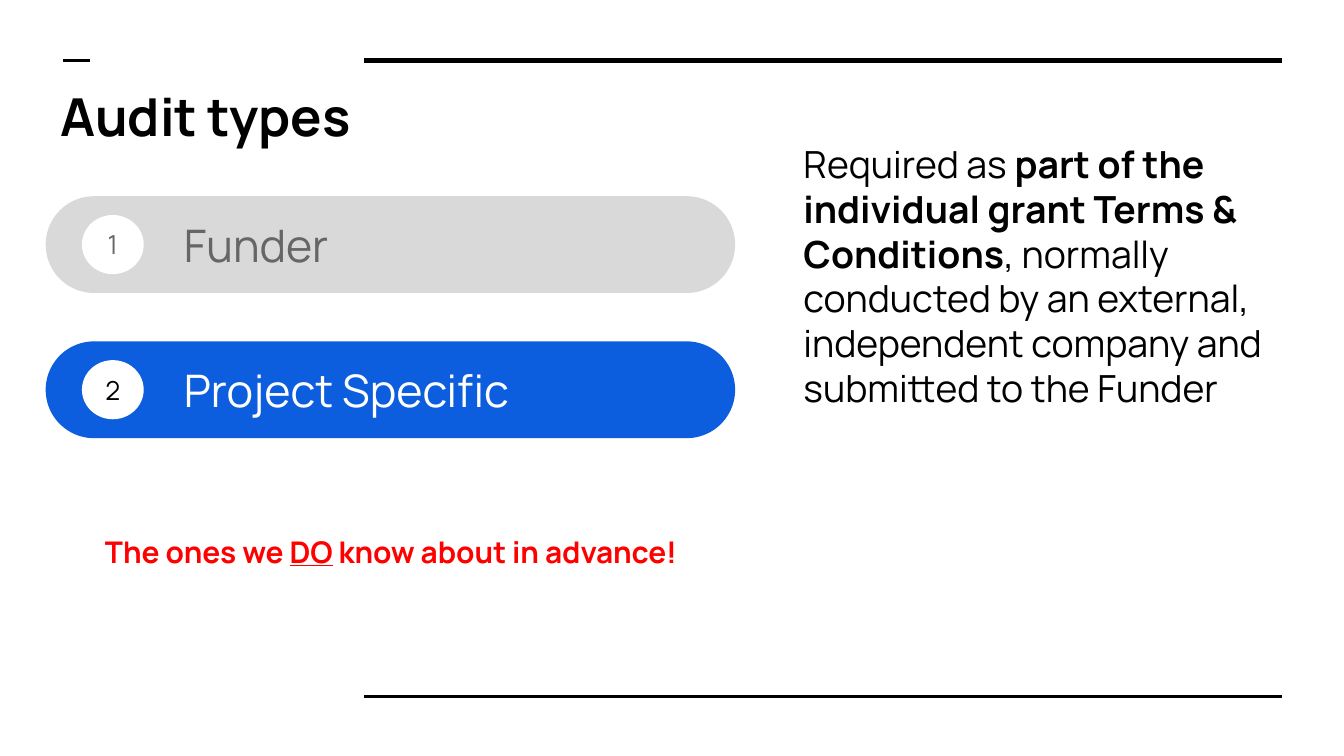
import pptx
import pptx.util
import pptx.dml.color
import pptx.enum.shapes
import pptx.enum.text
import pptx.oxml.ns
import lxml.etree

W = 10
H = W * 9 / 16
SHAPE = pptx.enum.shapes.MSO_SHAPE
ALIGN = pptx.enum.text.PP_ALIGN
ANCHOR = pptx.enum.text.MSO_ANCHOR

RULES = [(2.71, 9.54, 0.45, 3), (2.71, 9.54, 5.18, 1.5), (0.47, 0.67, 0.45, 1.5)]
TYPES = [
    ("1", "Funder", "D9D9D9", "666666", "666666"),
    ("2", "Project Specific", "0D5DDF", "000000", "FFFFFF"),
]
BAR_LEFT, BAR_TOP, BAR_W, BAR_H, BAR_STEP = 0.34, 1.46, 5.13, 0.72, 1.08
BADGE_LEFT, BADGE_W, BADGE_H = 0.61, 0.46, 0.44
LABEL_LEFT, LABEL_W = 1.27, 3.93
BOLD = {"bold": True}
TEXTS = [
    ((0.35, 0.53, 9.05, 0.83), [("Audit types", BOLD)], 28, "000000", ALIGN.LEFT),
    ((5.88, 0.95, 3.78, 4.04), [
        ("Required as ", {}),
        ("part of the individual grant Terms & Conditions", BOLD),
        (", normally conducted by an external, independent company and submitted to the Funder", {}),
    ], 20, "000000", ALIGN.LEFT),
    ((0.35, 3.87, 5.12, 0.44), [
        ("The ones we ", BOLD),
        ("DO", {"bold": True, "underline": True}),
        (" know about in advance!", BOLD),
    ], 16, "FF0000", ALIGN.CENTER),
]


def rgb(value):
    return pptx.dml.color.RGBColor.from_string(value)


def inches(box):
    return [pptx.util.Inches(v) for v in box]


def write(sp, runs, size, color, align=ALIGN.LEFT, anchor=ANCHOR.TOP):
    tf = sp.text_frame
    frame = {"word_wrap": True, "vertical_anchor": anchor}
    frame.update({f"margin_{side}": pptx.util.Inches(0.1)
                  for side in ("left", "top", "right", "bottom")})
    for name, value in frame.items():
        setattr(tf, name, value)
    p = tf.paragraphs[0]
    p.alignment = align
    for text, style in runs:
        r = p.add_run()
        r.text = text
        r.font.color.rgb = rgb(color)
        for name, value in {"name": "Manrope", "size": pptx.util.Pt(size), **style}.items():
            setattr(r.font, name, value)


def add_shape(slide, kind, box, fill):
    sp = slide.shapes.add_shape(kind, *inches(box))
    sp.shadow.inherit = False
    sp.fill.solid()
    sp.fill.fore_color.rgb = rgb(fill)
    sp.line.fill.background()
    return sp


def add_rule(slide, left, right, y, width):
    line = slide.shapes.add_connector(
        pptx.enum.shapes.MSO_CONNECTOR.STRAIGHT, *inches((left, y, right, y)))
    line.line.color.rgb = rgb("000000")
    line.line.width = pptx.util.Pt(width)
    lxml.etree.SubElement(line._element.spPr, pptx.oxml.ns.qn("a:effectLst"))


def add_type(slide, row, number, label, fill, number_color, label_color):
    top = BAR_TOP + row * BAR_STEP
    bar = add_shape(slide, SHAPE.ROUNDED_RECTANGLE, (BAR_LEFT, top, BAR_W, BAR_H), fill)
    bar.adjustments[0] = 0.5
    badge_top = top + (BAR_H - BADGE_H) / 2
    badge = add_shape(slide, SHAPE.OVAL, (BADGE_LEFT, badge_top, BADGE_W, BADGE_H), "FFFFFF")
    write(badge, [(number, {})], 14, number_color, ALIGN.CENTER, ANCHOR.MIDDLE)
    sp = slide.shapes.add_textbox(*inches((LABEL_LEFT, top, LABEL_W, BAR_H)))
    write(sp, [(label, {})], 24, label_color, anchor=ANCHOR.MIDDLE)


def main():
    prs = pptx.Presentation()
    prs.slide_width, prs.slide_height = inches((W, H))
    slide = prs.slides.add_slide(prs.slide_layouts[6])
    for rule in RULES:
        add_rule(slide, *rule)
    for row, audit_type in enumerate(TYPES):
        add_type(slide, row, *audit_type)
    for box, *content in TEXTS:
        write(slide.shapes.add_textbox(*inches(box)), *content)
    prs.save("out.pptx")


if __name__ == "__main__":
    main()
